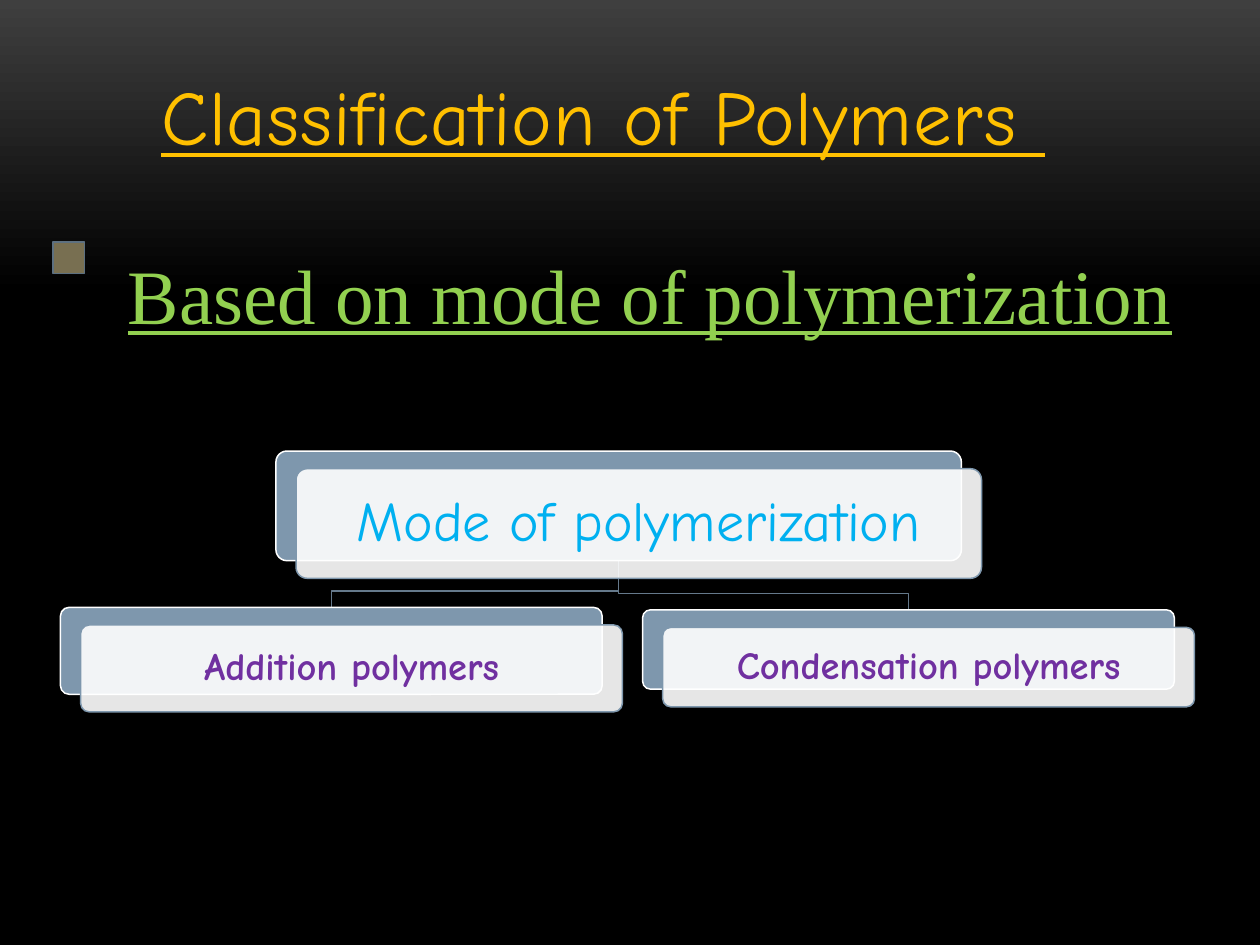
import pptx
import pptx.dml.color
import pptx.enum.shapes
import pptx.enum.text
import pptx.oxml
import pptx.util
from lxml import etree
from pptx.util import Inches

COLORS = {
    "glow": "3F3F3F", "black": "000000", "white": "FFFFFF",
    "title": "FFC000", "heading": "92D050", "outline": "758FA6",
    "root": "00B0F0", "leaf": "7030A0",
    "card": "7E97AD", "branch": "65798B",
    "marker": "786F51", "marker_edge": "5D7080",
}
SHAPE = pptx.enum.shapes.MSO_SHAPE
LINE_WIDTH = pptx.util.Pt(0.85)
CARD_SHIFT = (0.16, 0.14)


def rgb(name):
    return pptx.dml.color.RGBColor.from_string(COLORS[name])


def paint_background(page):
    fill = page.background.fill
    fill.gradient()
    fill.gradient_angle = 270
    for stop, name, position in zip(fill.gradient_stops, ("glow", "black"), (0, 0.31)):
        stop.color.rgb = rgb(name)
        stop.position = position


def write(frame, text, font, size, color):
    """Fill a text frame with one centred line and return its run."""
    frame.text = text
    frame.vertical_anchor = pptx.enum.text.MSO_ANCHOR.MIDDLE
    para = frame.paragraphs[0]
    para.alignment = pptx.enum.text.PP_ALIGN.CENTER
    span = para.runs[0]
    span.font.name = font
    span.font.size = pptx.util.Pt(size)
    span.font.color.rgb = rgb(color)
    return span


def add_headline(page, box, text, font, color):
    """Add an underlined line of large text and return its run."""
    headline = page.shapes.add_textbox(*map(Inches, box))
    frame = headline.text_frame
    frame.word_wrap = False
    frame.auto_size = pptx.enum.text.MSO_AUTO_SIZE.SHAPE_TO_FIT_TEXT
    span = write(frame, text, font, 44, color)
    span.font.underline = True
    return span


def outline_text(span, color):
    line = pptx.oxml.parse_xml(
        '<a:ln xmlns:a="http://schemas.openxmlformats.org/drawingml/2006/main" '
        f'w="{LINE_WIDTH}"><a:solidFill><a:srgbClr val="{COLORS[color]}"/>'
        "</a:solidFill></a:ln>")
    span.font._element.insert(0, line)


def add_block(shapes, kind, box, fill, edge):
    block = shapes.add_shape(kind, *map(Inches, box))
    block.shadow.inherit = False
    block.fill.solid()
    block.fill.fore_color.rgb = rgb(fill)
    block.line.color.rgb = rgb(edge)
    block.line.width = LINE_WIDTH
    return block


def make_translucent(shape, percent):
    color = shape.fill._xPr.find(".//" + pptx.oxml.ns.qn("a:srgbClr"))
    etree.SubElement(color, pptx.oxml.ns.qn("a:alpha"), val=str(percent * 1000))


def add_node(shapes, box, text, size, color, inset, bold=False):
    """Add a backing card with a translucent labelled card in front of it."""
    left, top, width, height = box
    front_box = (left + CARD_SHIFT[0], top + CARD_SHIFT[1], width, height)
    back = add_block(shapes, SHAPE.ROUNDED_RECTANGLE, box, "card", "white")
    front = add_block(shapes, SHAPE.ROUNDED_RECTANGLE, front_box, "white", "card")
    back.adjustments[0] = front.adjustments[0] = 0.1
    make_translucent(front, 90)
    frame = front.text_frame
    frame.word_wrap = True
    frame.margin_left = frame.margin_right = Inches(inset)
    frame.margin_top = frame.margin_bottom = Inches(inset)
    write(frame, text, "Comic Neue", size, color).font.bold = bold
    frame.paragraphs[0].line_spacing = 0.9


def add_branch(shapes, parent, child):
    """Draw an elbow from the bottom of the parent box to the top of the child."""
    start_x, start_y = parent[0] + parent[2] / 2, parent[1] + parent[3]
    end_x, end_y = child[0] + child[2] / 2, child[1]
    bend_y = end_y - 0.13
    builder = shapes.build_freeform(Inches(start_x), Inches(start_y))
    corners = [(start_x, bend_y), (end_x, bend_y), (end_x, end_y)]
    builder.add_line_segments([(Inches(x), Inches(y)) for x, y in corners], close=False)
    branch = builder.convert_to_shape()
    branch.shadow.inherit = False
    branch.fill.background()
    branch.line.color.rgb = rgb("branch")
    branch.line.width = LINE_WIDTH


def add_tree(page, root, leaves):
    """Add the diagram; root and leaves are (box, text) pairs."""
    shapes = page.shapes.add_group_shape().shapes
    for box, _ in reversed(leaves):
        add_branch(shapes, root[0], box)
    add_node(shapes, *root, 32, "root", 0.15)
    for box, text in leaves:
        add_node(shapes, box, text, 22, "leaf", 0.11, bold=True)


def main():
    deck = pptx.Presentation()
    deck.slide_width, deck.slide_height = Inches(10), Inches(7.5)
    page = deck.slides.add_slide(deck.slide_layouts[6])
    paint_background(page)

    title = add_headline(page, (0.79, 0.49, 7.99, 0.84),
                         "Classification of Polymers ", "Comic Neue", "title")
    title.font._element.set("spc", "50")
    heading = add_headline(page, (0.75, 1.91, 8.82, 0.84),
                           "Based on mode of polymerization", "Times New Roman", "heading")
    outline_text(heading, "outline")

    add_tree(page,
             ((2.19, 3.58, 5.44, 0.87), "Mode of polymerization"),
             [((0.48, 4.82, 4.3, 0.69), "Addition polymers"),
              ((5.1, 4.84, 4.22, 0.63), "Condensation polymers")])
    add_block(page.shapes, SHAPE.RECTANGLE, (0.42, 1.92, 0.25, 0.25),
              "marker", "marker_edge")
    deck.save("out.pptx")


if __name__ == "__main__":
    main()
